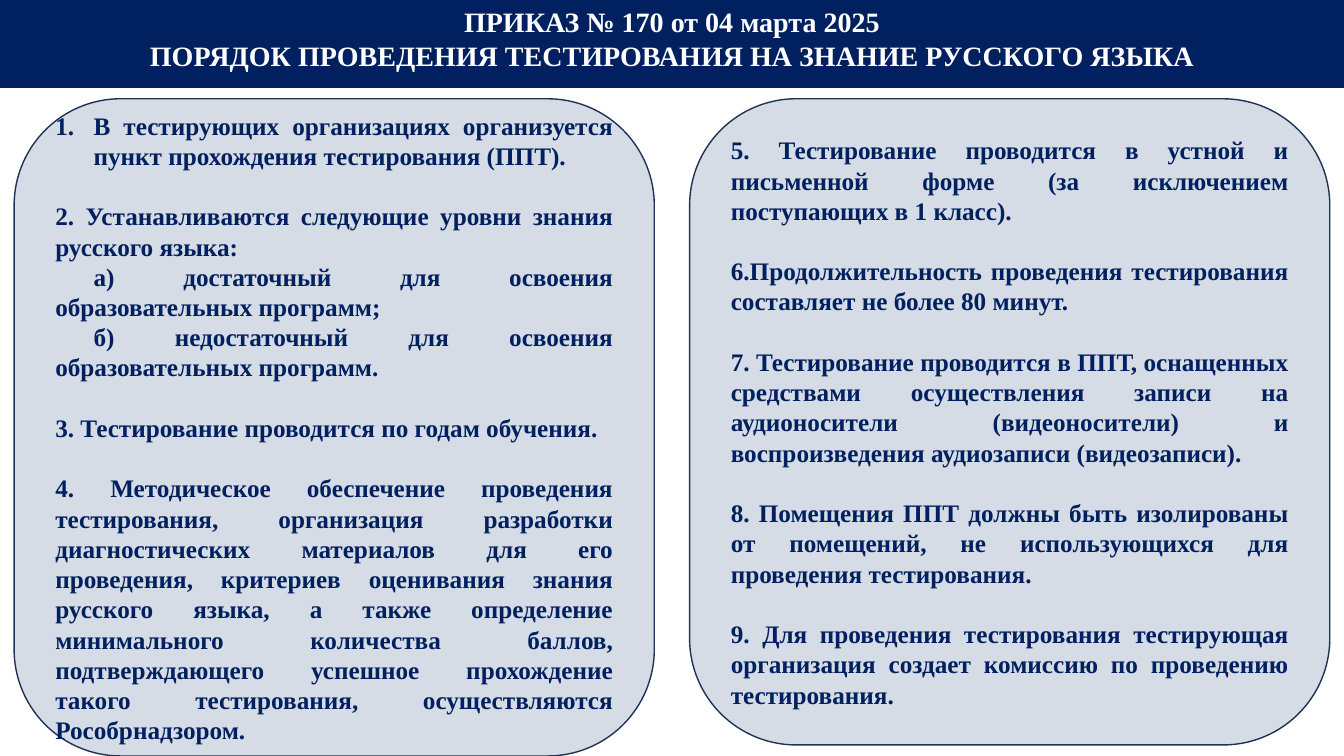
"""Build the slide on the rules of Russian language testing."""
from dataclasses import dataclass

from lxml import etree
from pptx import Presentation
from pptx.dml.color import RGBColor
from pptx.enum.shapes import MSO_SHAPE
from pptx.enum.text import MSO_ANCHOR, PP_ALIGN
from pptx.oxml.ns import qn
from pptx.slide import Slide
from pptx.text.text import _Paragraph
from pptx.util import Inches, Pt

RECTANGLE = MSO_SHAPE.RECTANGLE
ROUNDED = MSO_SHAPE.ROUNDED_RECTANGLE
MIDDLE = MSO_ANCHOR.MIDDLE
CENTER = PP_ALIGN.CENTER
JUSTIFY = PP_ALIGN.JUSTIFY

PAGE_WIDTH, PAGE_HEIGHT = Inches(13.33), Inches(7.5)
COLUMN, ROW = PAGE_WIDTH / 100, PAGE_HEIGHT / 100
PANEL_LEFT, PANEL_STEP, PANEL_WIDTH, PANEL_TOP = 1.05, 50.26, 47.63, 13.07
INDENT = Inches(0.38)


@dataclass(frozen=True)
class Theme:
    """Colours and type sizes of the slide."""
    navy: RGBColor = RGBColor.from_string("002060")
    outline: RGBColor = RGBColor.from_string("1E3256")
    pale: RGBColor = RGBColor.from_string("D6DCE5")
    white: RGBColor = RGBColor.from_string("FFFFFF")
    font: str = "Times New Roman"
    title_size: Pt = Pt(20)
    body_size: Pt = Pt(18)
    item_gap: Pt = Pt(21.6)


THEME = Theme()


@dataclass(frozen=True)
class Item:
    """One paragraph with its gap and indents."""
    text: str
    gap: bool = False
    margin: int = 0
    first_line: int = 0
    numbered: bool = False


@dataclass(frozen=True)
class Block:
    """A filled shape with text, placed in grid columns and rows."""
    left: float
    top: float
    width: float
    height: float
    items: tuple[Item, ...]
    preset: MSO_SHAPE = ROUNDED
    fill: RGBColor = THEME.pale
    line: RGBColor = THEME.outline
    ink: RGBColor = THEME.navy
    size: Pt = THEME.body_size
    align: PP_ALIGN = JUSTIFY


TITLE = (
    Item("ПРИКАЗ № 170 от 04 марта 2025"),
    Item("ПОРЯДОК ПРОВЕДЕНИЯ ТЕСТИРОВАНИЯ НА ЗНАНИЕ РУССКОГО ЯЗЫКА"),
)
ORGANISATION = (
    Item("В тестирующих организациях организуется пункт прохождения "
         "тестирования (ППТ).",
         margin=INDENT, first_line=-INDENT, numbered=True),
    Item("2. Устанавливаются следующие уровни знания русского языка:", gap=True),
    Item("а) достаточный для освоения образовательных программ;",
         first_line=INDENT),
    Item("б) недостаточный для освоения образовательных программ.",
         first_line=INDENT),
    Item("3. Тестирование проводится по годам обучения.", gap=True),
    Item("4. Методическое обеспечение проведения тестирования, организация "
         "разработки диагностических материалов для его проведения, критериев "
         "оценивания знания русского языка, а также определение минимального "
         "количества баллов, подтверждающего успешное прохождение такого "
         "тестирования, осуществляются Рособрнадзором.", gap=True),
)
PROCEDURE = (
    Item("5. Тестирование проводится в устной и письменной форме "
         "(за исключением поступающих в 1 класс)."),
    Item("6.Продолжительность проведения тестирования составляет "
         "не более 80 минут.", gap=True),
    Item("7. Тестирование проводится в ППТ, оснащенных средствами осуществления "
         "записи на аудионосители (видеоносители) и воспроизведения аудиозаписи "
         "(видеозаписи).", gap=True),
    Item("8. Помещения ППТ должны быть изолированы от помещений, "
         "не использующихся для проведения тестирования.", gap=True),
    Item("9. Для проведения тестирования тестирующая организация создает "
         "комиссию по проведению тестирования.", gap=True),
)
BLOCKS = (
    Block(0, -1.47, 100, 13.07, TITLE, RECTANGLE, THEME.navy, THEME.navy,
          THEME.white, THEME.title_size, CENTER),
    *(Block(PANEL_LEFT + index * PANEL_STEP, PANEL_TOP, PANEL_WIDTH, height, items)
      for index, (height, items) in enumerate(
          ((86.93, ORGANISATION), (85.47, PROCEDURE)))),
)


def write_item(para: _Paragraph, item: Item, block: Block) -> None:
    """Write one formatted paragraph."""
    para.alignment = block.align
    para.space_before = THEME.item_gap if item.gap else Pt(0)
    properties = para._p.get_or_add_pPr()
    properties.set("marL", str(int(item.margin)))
    properties.set("indent", str(int(item.first_line)))
    if item.numbered:
        etree.SubElement(properties, qn("a:buFont"), typeface="+mj-lt")
        etree.SubElement(properties, qn("a:buAutoNum"), type="arabicPeriod")
    span = para.add_run()
    span.text = item.text
    formats = {"name": THEME.font, "size": block.size, "bold": True}
    for name, value in formats.items():
        setattr(span.font, name, value)
    span.font.color.rgb = block.ink


def draw_block(page: Slide, block: Block) -> None:
    """Draw one shape and its paragraphs."""
    box = page.shapes.add_shape(
        block.preset, round(block.left * COLUMN), round(block.top * ROW),
        round(block.width * COLUMN), round(block.height * ROW))
    box.shadow.inherit = False
    box.fill.solid()
    box.fill.fore_color.rgb = block.fill
    box.line.color.rgb = block.line
    box.line.width = Pt(1)
    frame = box.text_frame
    for name, value in {"word_wrap": True, "vertical_anchor": MIDDLE}.items():
        setattr(frame, name, value)
    for index, item in enumerate(block.items):
        para = frame.add_paragraph() if index else frame.paragraphs[0]
        write_item(para, item, block)


def main() -> None:
    """Create and save the deck."""
    deck = Presentation()
    deck.slide_width, deck.slide_height = PAGE_WIDTH, PAGE_HEIGHT
    page = deck.slides.add_slide(deck.slide_layouts[6])
    for block in BLOCKS:
        draw_block(page, block)
    deck.save("out.pptx")


if __name__ == "__main__":
    main()
